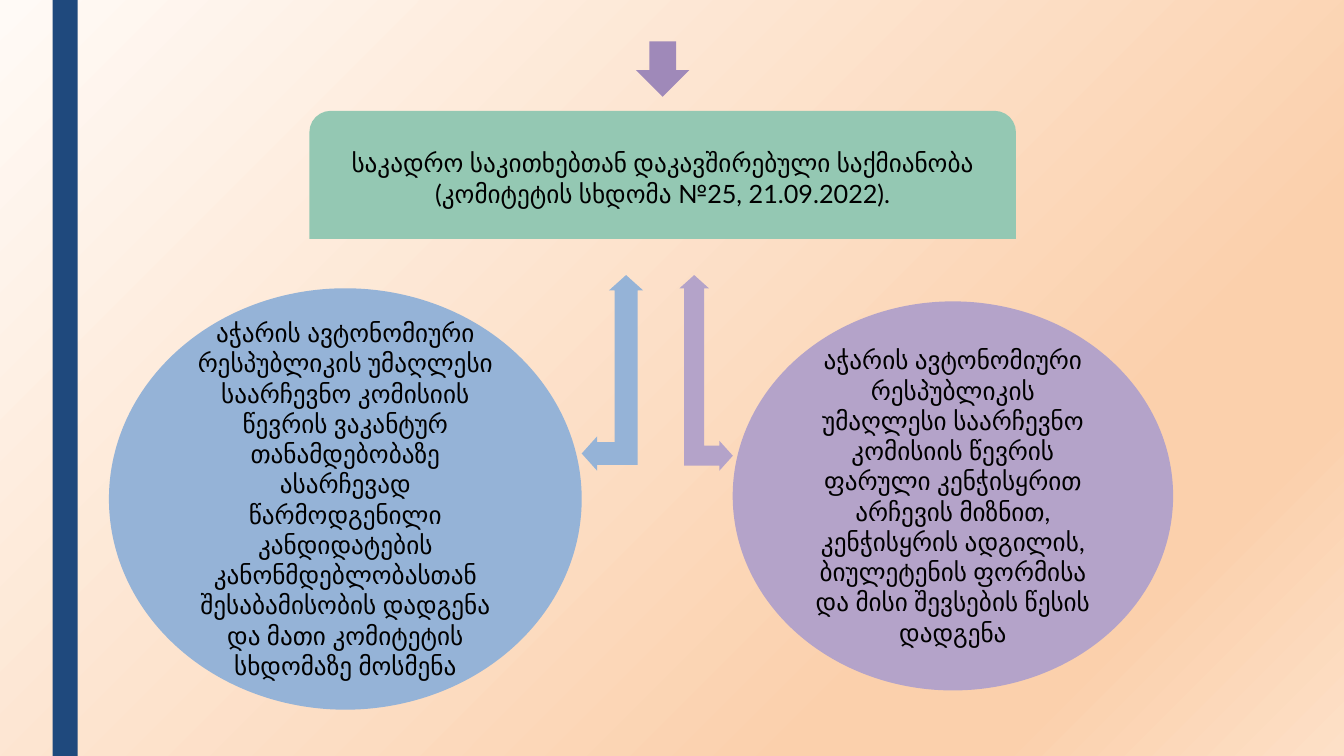
from dataclasses import dataclass

from lxml import etree
from pptx import Presentation
from pptx.dml.color import RGBColor
from pptx.enum import shapes, text
from pptx.oxml import ns
from pptx.util import Pt

NAVY = RGBColor(0x1F, 0x49, 0x7D)
GREEN = RGBColor(0x94, 0xC8, 0xB3)
BLUE = RGBColor(0x95, 0xB3, 0xD7)
LILAC = RGBColor(0xB4, 0xA3, 0xC9)
PURPLE = RGBColor(0x9F, 0x89, 0xB9)
BLACK = RGBColor(0, 0, 0)
CREAM = RGBColor(0xFF, 0xFA, 0xF6)
PEACH = RGBColor(0xFB, 0xD0, 0xAC)
PALE_PEACH = RGBColor(0xFD, 0xE0, 0xC7)

BACKDROP = ((0, CREAM), (74, PEACH), (83, PEACH), (100, PALE_PEACH))
BACKDROP_ANGLE = 45
FONT_FORMAT = {"name": "Lato", "size": Pt(18)}
FRAME_FORMAT = {"word_wrap": True, "vertical_anchor": text.MSO_ANCHOR.MIDDLE}
BENT_ARROW = (0.373, 0.278, 0.25)

KIND = shapes.MSO_SHAPE


@dataclass(frozen=True)
class Figure:
    kind: shapes.MSO_SHAPE
    left: float
    top: float
    width: float
    height: float
    fill: RGBColor
    lines: tuple[str, ...] = ()
    adjustments: tuple[float, ...] = ()
    mirrored: bool = False


FIGURES = (
    Figure(KIND.RECTANGLE, 37.5, 0, 18, 540, NAVY),
    Figure(KIND.ROUND_2_SAME_RECTANGLE, 221, 79.2, 504.7, 91.4, GREEN, (
        "საკადრო საკითხებთან დაკავშირებული საქმიანობა",
        "(კომიტეტის სხდომა №25, 21.09.2022).",
    )),
    Figure(KIND.LEFT_UP_ARROW, 415.5, 196.5, 43.9, 139.7, BLUE,
           adjustments=BENT_ARROW),
    Figure(KIND.OVAL, 77.8, 205.9, 337.7, 301, BLUE, (
        "აჭარის ავტონომიური რესპუბლიკის უმაღლესი საარჩევნო კომისიის წევრის "
        "ვაკანტურ თანამდებობაზე ასარჩევად წარმოდგენილი კანდიდატების "
        "კანონმდებლობასთან შესაბამისობის დადგენა და მათი კომიტეტის "
        "სხდომაზე მოსმენა",
    )),
    Figure(KIND.OVAL, 523.4, 215.3, 314.6, 277.9, LILAC, (
        "აჭარის ავტონომიური რესპუბლიკის უმაღლესი საარჩევნო კომისიის წევრის "
        "ფარული კენჭისყრით არჩევის მიზნით, კენჭისყრის ადგილის, ბიულეტენის "
        "ფორმისა და მისი შევსების წესის დადგენა",
    )),
    Figure(KIND.DOWN_ARROW, 454.3, 29.5, 38.2, 39.6, PURPLE),
    Figure(KIND.LEFT_UP_ARROW, 485.3, 196.5, 38.2, 139.7, LILAC,
           adjustments=BENT_ARROW, mirrored=True),
)


def apply_format(target: object, values: dict[str, object]) -> None:
    for name, value in values.items():
        setattr(target, name, value)


def paint_backdrop(page) -> None:
    """Fill the page with the diagonal gradient, which needs more than two stops."""
    page.background.fill.gradient()
    gradient = page.element.find(".//" + ns.qn("a:gradFill"))
    for child in list(gradient):
        gradient.remove(child)
    stops = etree.SubElement(gradient, ns.qn("a:gsLst"))
    for percent, color in BACKDROP:
        stop = etree.SubElement(stops, ns.qn("a:gs"), pos=str(percent * 1000))
        etree.SubElement(stop, ns.qn("a:srgbClr"), val=str(color))
    etree.SubElement(gradient, ns.qn("a:lin"),
                     ang=str(BACKDROP_ANGLE * 60000), scaled="0")


def write_lines(frame, lines: tuple[str, ...]) -> None:
    apply_format(frame, FRAME_FORMAT)
    for index, line in enumerate(lines):
        para = frame.add_paragraph() if index else frame.paragraphs[0]
        para.alignment = text.PP_ALIGN.CENTER
        span = para.add_run()
        span.text = line
        apply_format(span.font, FONT_FORMAT)
        span.font.color.rgb = BLACK


def draw_figure(page, figure: Figure) -> None:
    box = page.shapes.add_shape(figure.kind, Pt(figure.left), Pt(figure.top),
                                Pt(figure.width), Pt(figure.height))
    box.shadow.inherit = False
    box.fill.solid()
    box.fill.fore_color.rgb = figure.fill
    box.line.fill.background()
    for index, value in enumerate(figure.adjustments):
        box.adjustments[index] = value
    if figure.mirrored:
        box.element.spPr.find(ns.qn("a:xfrm")).set("flipH", "1")
    if figure.lines:
        write_lines(box.text_frame, figure.lines)


def main() -> None:
    deck = Presentation()
    apply_format(deck, {"slide_width": Pt(960), "slide_height": Pt(540)})
    page = deck.slides.add_slide(deck.slide_layouts.get_by_name("Blank"))
    paint_backdrop(page)
    for figure in FIGURES:
        draw_figure(page, figure)
    deck.save("out.pptx")


if __name__ == "__main__":
    main()
